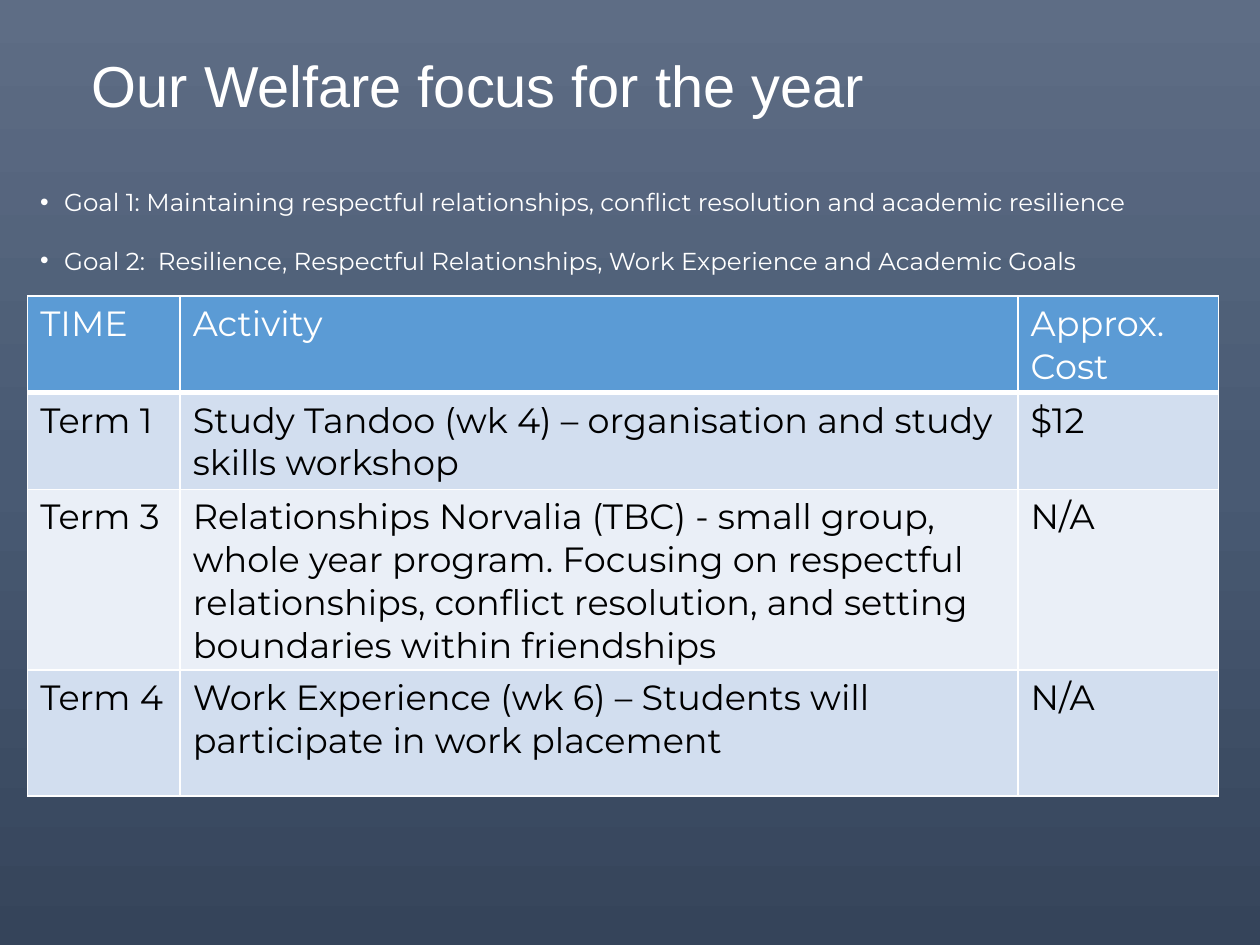
"""Build the welfare focus slide with its goals and activity table."""
from copy import deepcopy

from lxml import etree
from pptx import Presentation
from pptx.dml.color import RGBColor
from pptx.enum import text
from pptx.oxml import ns
from pptx.util import Inches, Pt

THEME = {
    "background": ["5E6D85", "495A73", "35445A"],
    "white": "FFFFFF",
    "black": "000000",
    "header": "5B9BD5",
    "bands": ["D2DEEF", "EAEFF7"],
    "heading_font": "Arial",
    "body_font": "Montserrat",
    "title_size": 33,
    "goal_size": 14,
    "table_size": 20,
}
GOALS = [
    "Goal 1: Maintaining respectful relationships, conflict resolution and academic resilience",
    "Goal 2:  Resilience, Respectful Relationships, Work Experience and Academic Goals",
]
ROWS = [
    ("TIME", "Activity", "Approx. Cost"),
    ("Term 1", "Study Tandoo (wk 4) – organisation and study skills workshop", "$12"),
    ("Term 3", "Relationships Norvalia (TBC) - small group, whole year program. "
     "Focusing on respectful relationships, conflict resolution, and setting "
     "boundaries within friendships", "N/A"),
    ("Term 4", "Work Experience (wk 6) – Students will participate in work placement", "N/A"),
]
COLUMN_WIDTHS = [1.21, 6.65, 1.59]
ROW_HEIGHTS = [0.72, 0.72, 1.41, 1]


def style_text(para, family, size, color):
    for name, value in {"name": family, "size": Pt(size)}.items():
        setattr(para.font, name, value)
    para.font.color.rgb = RGBColor.from_string(color)


def add_border(cell, side, width):
    properties = cell._tc.get_or_add_tcPr()
    line = etree.SubElement(properties, ns.qn(f"a:ln{side}"), w=str(Pt(width)))
    solid = etree.SubElement(line, ns.qn("a:solidFill"))
    etree.SubElement(solid, ns.qn("a:srgbClr"), val=THEME["white"])


deck = Presentation()
deck.slide_width, deck.slide_height = Inches(10), Inches(7.5)
page = deck.slides.add_slide(deck.slide_layouts[5])

backdrop = page.background.fill
backdrop.gradient()
backdrop.gradient_angle = 270
stop_list = page._element.find(f".//{ns.qn('a:gsLst')}")
stop_list.insert(1, deepcopy(stop_list[0]))
for index, (stop, color) in enumerate(zip(backdrop.gradient_stops, THEME["background"])):
    stop.position = index / 2
    stop.color.rgb = RGBColor.from_string(color)

title = page.shapes.title
title_place = {"left": 0.63, "top": 0.15, "width": 8.62, "height": 1.11}
for name, value in title_place.items():
    setattr(title, name, Inches(value))
title.text_frame.text = "Our Welfare focus for the year"
title.text_frame.vertical_anchor = text.MSO_ANCHOR.MIDDLE
heading = title.text_frame.paragraphs[0]
for name, value in {"alignment": text.PP_ALIGN.LEFT, "line_spacing": 0.9}.items():
    setattr(heading, name, value)
style_text(heading, THEME["heading_font"], THEME["title_size"], THEME["white"])

goals = page.shapes.add_textbox(Inches(0.22), Inches(1.42), Inches(9.45), Inches(0.77))
goals.text_frame.word_wrap = True
goals.text_frame.text = "\n".join(GOALS)
for index, para in enumerate(goals.text_frame.paragraphs):
    spacing = {"line_spacing": 1.07, "space_before": Pt(7.5 if index else 0), "space_after": Pt(8)}
    for name, value in spacing.items():
        setattr(para, name, value)
    properties = para._p.get_or_add_pPr()
    properties.set("marL", str(Inches(0.19)))
    properties.set("indent", str(-Inches(0.19)))
    etree.SubElement(properties, ns.qn("a:buFont"), typeface=THEME["heading_font"])
    etree.SubElement(properties, ns.qn("a:buChar"), char="•")
    style_text(para, THEME["body_font"], THEME["goal_size"], THEME["white"])

table = page.shapes.add_table(
    len(ROWS), len(COLUMN_WIDTHS), Inches(0.22), Inches(2.35),
    Inches(sum(COLUMN_WIDTHS)), Inches(sum(ROW_HEIGHTS))).table
for column, width in zip(table.columns, COLUMN_WIDTHS):
    column.width = Inches(width)
for index, (row, height, words) in enumerate(zip(table.rows, ROW_HEIGHTS, ROWS)):
    row.height = Inches(height)
    fill_color = THEME["bands"][(index - 1) % 2] if index else THEME["header"]
    text_color = THEME["black"] if index else THEME["white"]
    for cell, wording in zip(row.cells, words):
        cell.text = wording
        para = cell.text_frame.paragraphs[0]
        style_text(para, THEME["body_font"], THEME["table_size"], text_color)
        para.font.bold = False
        for side in "LRTB":
            add_border(cell, side, 3 if index == 0 and side == "B" else 1)
        cell.fill.solid()
        cell.fill.fore_color.rgb = RGBColor.from_string(fill_color)

deck.save("out.pptx")
